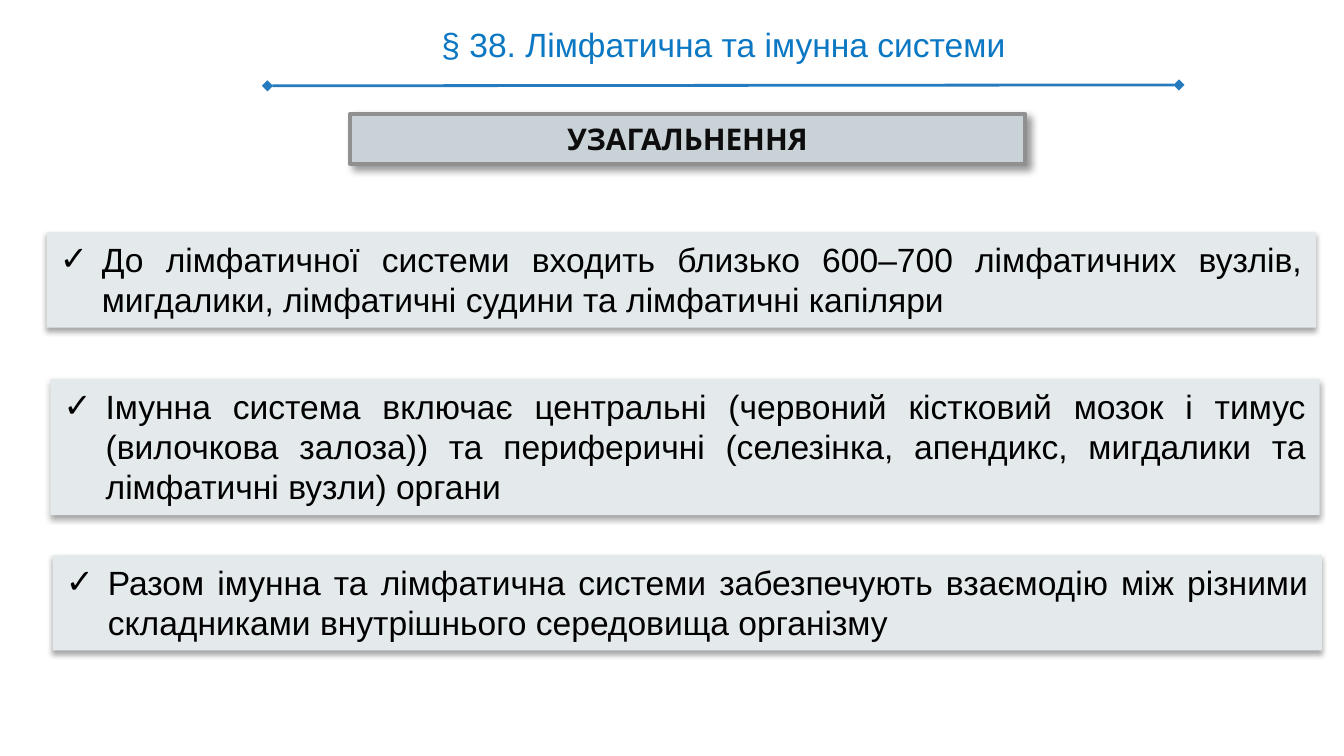
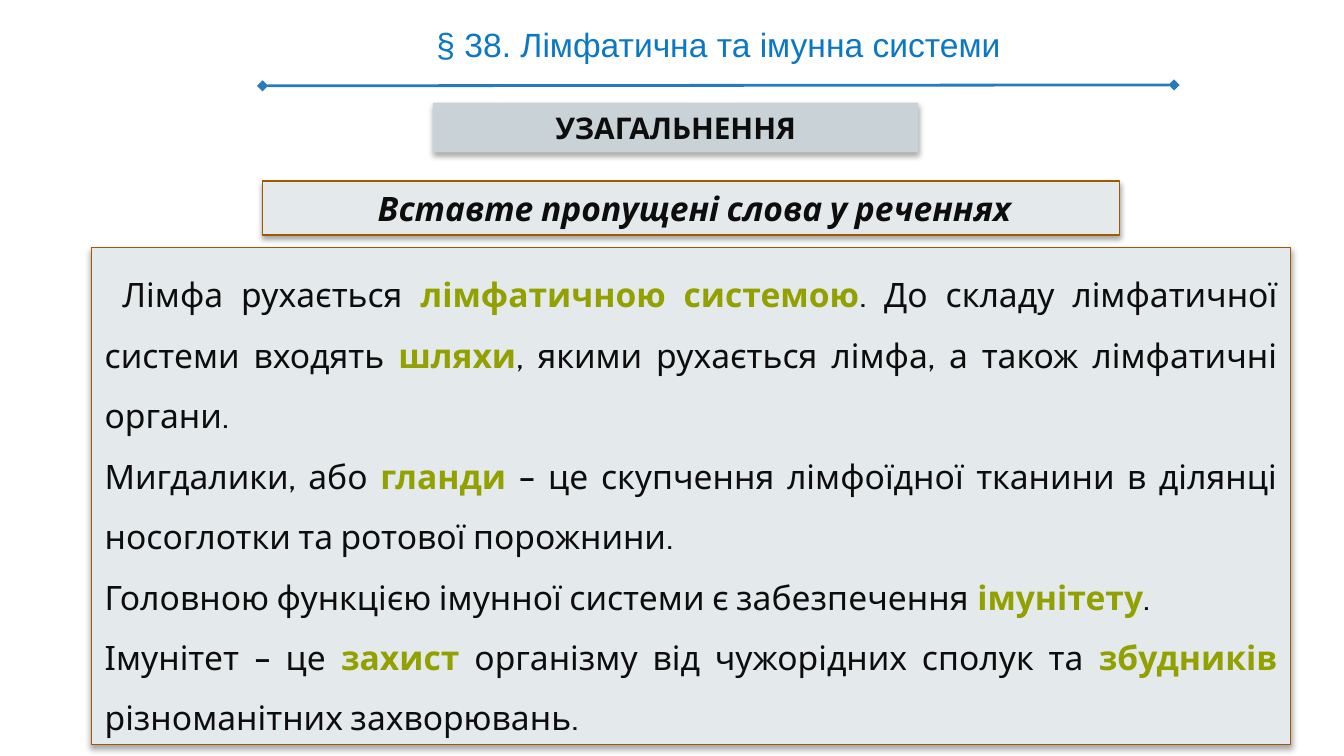
from lxml import etree
from pptx import Presentation
from pptx.dml.color import RGBColor
from pptx.enum.shapes import MSO_CONNECTOR as CONN, MSO_SHAPE as SHAPE
from pptx.enum.text import MSO_ANCHOR as ANCHOR, MSO_AUTO_SIZE as AUTO, PP_ALIGN as ALIGN
from pptx.oxml.ns import qn
from pptx.util import Pt

# Colours
BLACK = RGBColor(0x00, 0x00, 0x00)
INK = RGBColor(0x0D, 0x0D, 0x0D)
TITLE_BLUE = RGBColor(0x0C, 0x77, 0xC3)
RULE_BLUE = RGBColor(0x25, 0x7B, 0xBE)
PANEL = RGBColor(0xE4, 0xE9, 0xEB)
BANNER = RGBColor(0xC9, 0xD3, 0xD7)
GREY = RGBColor(0x90, 0x90, 0x90)
BROWN = RGBColor(0xA0, 0x59, 0x00)
OLIVE = RGBColor(0x92, 0xA0, 0x00)

# Text formats
TITLE = dict(name="Arial", size=Pt(18))
HEADING = dict(name="Cabin", size=Pt(16), bold=True)
TASK = dict(name="Cabin", size=Pt(18), bold=True, italic=True)
BODY = dict(name="Cabin", size=Pt(18))

# Shadows: opacity %, blur, distance, angle
SOFT = (35, 3.1, 1.8, 90)
DEEP = (40, 4, 3, 45)

# Slide content
SECTION = "§ 38. Лімфатична та імунна системи"
SUMMARY = "УЗАГАЛЬНЕННЯ"
POINTS = [
    (25, 124.5, 51, "До лімфатичної системи входить близько 600–700 лімфатичних вузлів, "
     "мигдалики, лімфатичні судини та лімфатичні капіляри"),
    (27, 203, 73, "Імунна система включає центральні (червоний кістковий мозок і тимус "
     "(вилочкова залоза)) та периферичні (селезінка, апендикс, мигдалики та "
     "лімфатичні вузли) органи"),
    (28.2, 297.5, 51, "Разом імунна та лімфатична системи забезпечують взаємодію між різними "
     "складниками внутрішнього середовища організму"),
]
# Words between asterisks are the filled-in answers
SENTENCES = [
    " Лімфа рухається *лімфатичною системою*. До складу лімфатичної системи входять "
    "*шляхи*, якими рухається лімфа, а також лімфатичні органи.",
    "Мигдалики, або *гланди* – це скупчення лімфоїдної тканини в ділянці носоглотки "
    "та ротової порожнини.",
    "Головною функцією імунної системи є забезпечення *імунітету*.",
    "Імунітет – це *захист* організму від чужорідних сполук та *збудників* "
    "різноманітних захворювань.",
]


def sub(parent, tag, **attrs):
    return etree.SubElement(parent, qn(tag), {k: str(v) for k, v in attrs.items()})


def add_run(p, text, fmt, color):
    r = p.add_run()
    r.text = text
    for key, value in fmt.items():
        setattr(r.font, key, value)
    r.font.color.rgb = color


def set_shadow(sp, opacity, blur, dist, angle):
    sp.shadow.inherit = False
    effects = sp._element.spPr.find(qn("a:effectLst"))
    shadow = sub(effects, "a:outerShdw", blurRad=Pt(blur), dist=Pt(dist),
                 dir=angle * 60000, algn="ctr", rotWithShape=0)
    color = sub(shadow, "a:srgbClr", val=BLACK)
    sub(color, "a:alpha", val=opacity * 1000)


def add_panel(s, box, fill, line=None, width=0.75, shadow=SOFT):
    """Shadowed rectangle; returns its text frame."""
    sp = s.shapes.add_shape(SHAPE.RECTANGLE, *map(Pt, box))
    sp.fill.solid()
    sp.fill.fore_color.rgb = fill
    if line is None:
        sp.line.fill.background()
    else:
        sp.line.color.rgb = line
        sp.line.width = Pt(width)
    set_shadow(sp, *shadow)
    tf = sp.text_frame
    tf.word_wrap = True
    tf.auto_size = AUTO.SHAPE_TO_FIT_TEXT
    tf.vertical_anchor = ANCHOR.TOP
    return tf


def add_label(s, box, text, fmt, fill, **style):
    p = add_panel(s, box, fill, **style).paragraphs[0]
    p.alignment = ALIGN.CENTER
    add_run(p, text, fmt, INK)


def add_point(s, left, top, height, text):
    """Panel with one check-marked statement."""
    p = add_panel(s, (left, top, 680, height), PANEL).paragraphs[0]
    pPr = p._p.get_or_add_pPr()
    pPr.set("marL", str(Pt(22.5)))
    pPr.set("indent", str(-Pt(22.5)))
    sub(sub(pPr, "a:buClr"), "a:srgbClr", val=BLACK)
    sub(pPr, "a:buFont", typeface="Arial")
    sub(pPr, "a:buChar", char="✓")
    p.alignment = ALIGN.JUSTIFY
    add_run(p, text, TITLE, BLACK)


def add_sentences(s, box, sentences):
    tf = add_panel(s, box, PANEL, line=BROWN)
    for i, sentence in enumerate(sentences):
        p = tf.add_paragraph() if i else tf.paragraphs[0]
        p.alignment = ALIGN.JUSTIFY
        p.line_spacing = 1.5
        for j, part in enumerate(sentence.split("*")):
            answer = j % 2 == 1
            add_run(p, part, dict(BODY, bold=answer), OLIVE if answer else INK)


def add_header(s, left):
    """Section title with a diamond-ended rule below it."""
    tf = s.shapes.add_textbox(Pt(left), Pt(5.8), Pt(516), Pt(36)).text_frame
    tf.word_wrap = True
    tf.auto_size = AUTO.SHAPE_TO_FIT_TEXT
    for side in ("left", "top", "right", "bottom"):
        setattr(tf, f"margin_{side}", Pt(7.2))
    p = tf.paragraphs[0]
    p.alignment = ALIGN.CENTER
    add_run(p, SECTION, TITLE, TITLE_BLUE)

    rule = s.shapes.add_connector(CONN.STRAIGHT, Pt(left + 13.7), Pt(46),
                                  Pt(left + 502), Pt(45.5))
    rule.line.color.rgb = RULE_BLUE
    rule.line.width = Pt(1.5)
    ln = rule.line._get_or_add_ln()
    for end in ("a:headEnd", "a:tailEnd"):
        sub(ln, end, type="diamond")
    sub(rule._element.spPr, "a:effectLst")


def main():
    prs = Presentation()
    prs.slide_width, prs.slide_height = Pt(720), Pt(405)
    blank = prs.slide_layouts[6]

    # Slide 1: summary statements
    s = prs.slides.add_slide(blank)
    for point in POINTS:
        add_point(s, *point)
    add_label(s, (187.5, 61, 361.5, 26.7), SUMMARY, HEADING, BANNER,
              line=GREY, width=2.25, shadow=DEEP)
    add_header(s, 129.6)

    # Slide 2: fill-in exercise
    s = prs.slides.add_slide(blank)
    add_label(s, (232, 55, 260, 26.7), SUMMARY, HEADING, BANNER)
    add_label(s, (140.6, 97, 459, 29), " Вставте пропущені слова у реченнях",
              TASK, PANEL, line=BROWN)
    add_header(s, 127)
    add_sentences(s, (49, 132.5, 642.5, 266.5), SENTENCES)

    prs.save("out.pptx")


if __name__ == "__main__":
    main()
